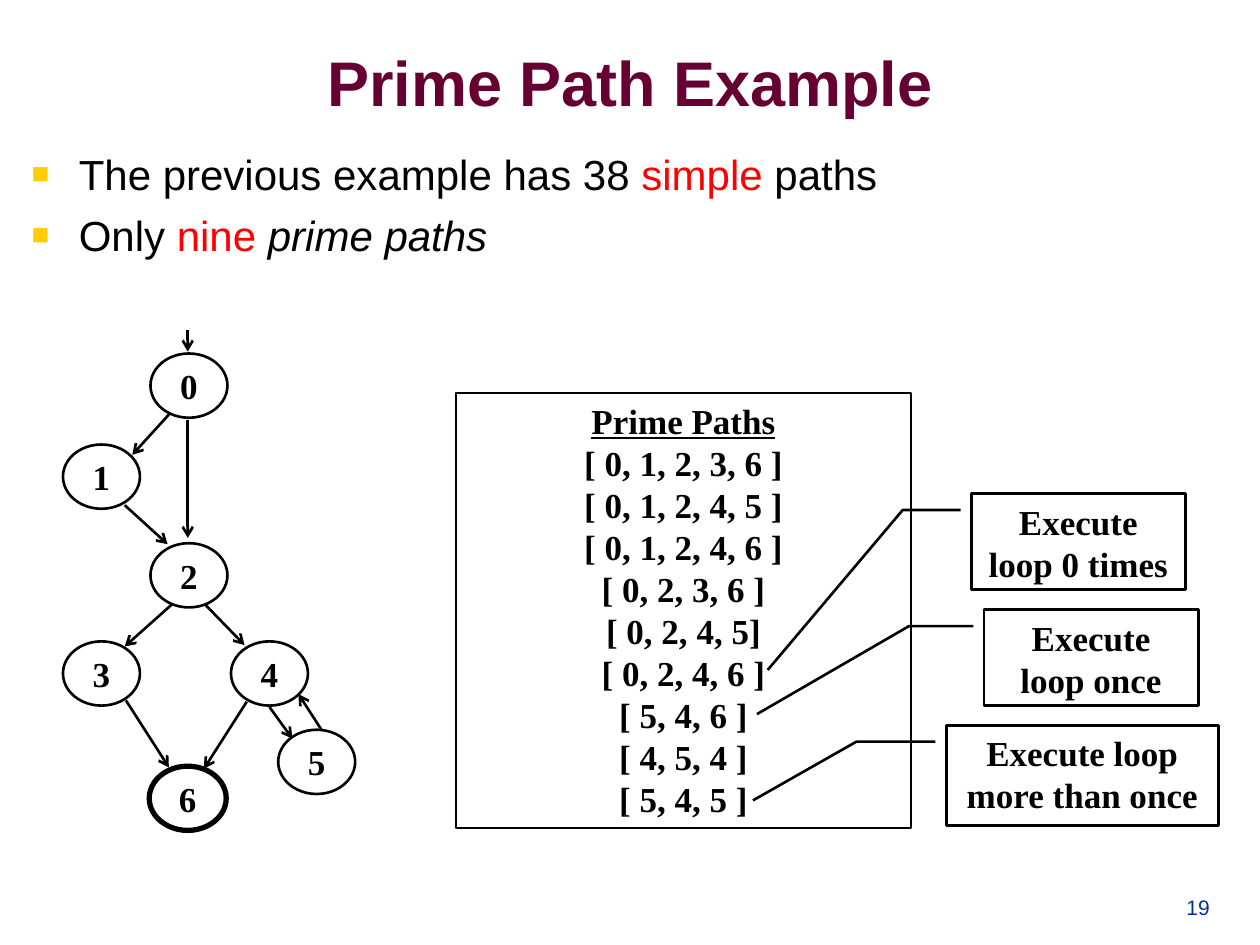
"""Build the slide that lists the prime paths of a control-flow graph."""
from typing import NamedTuple

from lxml.etree import SubElement
from pptx import Presentation
from pptx.dml.color import RGBColor
from pptx.enum.shapes import MSO_CONNECTOR, MSO_SHAPE
from pptx.enum.text import MSO_ANCHOR, MSO_AUTO_SIZE, PP_ALIGN
from pptx.oxml.ns import qn
from pptx.util import Pt

BLACK, RED, MAROON, BLUE, GOLD = "000000", "FF0000", "660033", "003399", "FFCC00"
TITLE = {"name": "Arial", "size": Pt(36), "bold": True}
BODY = {"name": "Arial", "size": Pt(24), "bold": False}
PAGE = {"name": "Arial", "size": Pt(12), "bold": False}
LABEL = {"name": "Times New Roman", "size": Pt(20), "bold": True}
NODE_WIDTH, NODE_HEIGHT = 44, 36.7


class Node(NamedTuple):
    label: str
    left: float
    top: float
    border: float = 1.5


class Edge(NamedTuple):
    x1: float
    y1: float
    x2: float
    y2: float


class Callout(NamedTuple):
    label: str
    left: float
    top: float
    width: float
    height: float
    leader: tuple


class Part(NamedTuple):
    wording: str
    color: str = BLACK
    italic: bool = False


NODES = [
    Node("0", 86, 202), Node("1", 36, 254), Node("2", 86, 310.4),
    Node("3", 36, 366.5), Node("4", 132, 366.5), Node("5", 159, 417),
    Node("6", 85.3, 437.8, 3),
]
EDGES = [
    Edge(107.3, 188.6, 107.3, 200.9), Edge(96.5, 236.9, 75.6, 259.9),
    Edge(107.3, 239.8, 107.3, 307.4), Edge(71.3, 288.7, 95.8, 311),
    Edge(98, 345.6, 71.3, 369.4), Edge(117.4, 345.6, 139.7, 368.6),
    Edge(72, 400.3, 96.5, 438.5), Edge(141, 401, 116.6, 439.2),
    Edge(154, 404, 167, 422), Edge(183.6, 416.9, 170.6, 396.7),
]
CALLOUTS = [
    Callout("Execute loop 0 times", 555, 282.2, 122.4, 54.7,
            (0.17, -0.05, 0.17, -0.32, 1.84, -0.95)),
    Callout("Execute loop once", 562.3, 348.5, 122.4, 54.7,
            (0.17, -0.05, 0.17, -0.35, 1.09, -1.06)),
    Callout("Execute loop more than once", 540.7, 414.7, 155.5, 56.9,
            (0.16, -0.04, 0.16, -0.33, 0.75, -0.71)),
]
PRIME_PATHS = [
    "[ 0, 1, 2, 3, 6 ]", "[ 0, 1, 2, 4, 5 ]", "[ 0, 1, 2, 4, 6 ]",
    "[ 0, 2, 3, 6 ]", "[ 0, 2, 4, 5]", "[ 0, 2, 4, 6 ]",
    "[ 5, 4, 6 ]", "[ 4, 5, 4 ]", "[ 5, 4, 5 ]",
]
BULLETS = [
    [Part("The previous example has 38 "), Part("simple ", RED), Part("paths")],
    [Part("Only "), Part("nine ", RED), Part("prime paths", italic=True)],
]


def rgb(color: str) -> RGBColor:
    return RGBColor.from_string(color)


def put_text(paragraph, wording: str, values: dict, color: str = BLACK):
    run = paragraph.add_run()
    run.text = wording
    for name, value in values.items():
        setattr(run.font, name, value)
    run.font.color.rgb = rgb(color)
    return run


def place(holder, left: float, top: float, width: float, height: float) -> None:
    holder.left, holder.top = Pt(left), Pt(top)
    holder.width, holder.height = Pt(width), Pt(height)


def add_outline(slide, kind, left: float, top: float, width: float,
                height: float, border: float = 1.5):
    outline = slide.shapes.add_shape(kind, Pt(left), Pt(top), Pt(width), Pt(height))
    outline.shadow.inherit = False
    outline.fill.background()
    outline.line.color.rgb = rgb(BLACK)
    outline.line.width = Pt(border)
    outline.text_frame.vertical_anchor = MSO_ANCHOR.TOP
    return outline


def put_lines(frame, lines: list) -> None:
    for index, line in enumerate(lines):
        paragraph = frame.add_paragraph() if index else frame.paragraphs[0]
        paragraph.alignment = PP_ALIGN.CENTER
        paragraph.line_spacing = Pt(24)
        put_text(paragraph, line, LABEL)


def add_node(slide, node: Node) -> None:
    circle = add_outline(slide, MSO_SHAPE.OVAL, node.left, node.top,
                         NODE_WIDTH, NODE_HEIGHT, node.border)
    frame = circle.text_frame
    frame.word_wrap = False
    frame.vertical_anchor = MSO_ANCHOR.MIDDLE
    for side in ("left", "top", "right", "bottom"):
        setattr(frame, f"margin_{side}", 0)
    put_lines(frame, [node.label])


def add_edge(slide, edge: Edge) -> None:
    arrow = slide.shapes.add_connector(MSO_CONNECTOR.STRAIGHT, *map(Pt, edge))
    arrow.line.color.rgb = rgb(BLACK)
    arrow.line.width = Pt(1.5)
    SubElement(arrow.line._get_or_add_ln(), qn("a:tailEnd"), type="arrow")
    SubElement(arrow._element.spPr, qn("a:effectLst"))


def add_callout(slide, callout: Callout) -> None:
    box = add_outline(slide, MSO_SHAPE.LINE_CALLOUT_2, callout.left, callout.top,
                      callout.width, callout.height)
    for index, value in enumerate(callout.leader):
        box.adjustments[index] = value
    put_lines(box.text_frame, [callout.label])


def add_bullet(paragraph) -> None:
    properties = paragraph._p.get_or_add_pPr()
    properties.set("marL", str(Pt(27)))
    properties.set("indent", str(Pt(-27)))
    tint = SubElement(properties, qn("a:buClr"))
    SubElement(tint, qn("a:srgbClr"), val=GOLD)
    SubElement(properties, qn("a:buSzPct"), val="70000")
    SubElement(properties, qn("a:buFont"), typeface="Arial")
    SubElement(properties, qn("a:buChar"), char="■")


def fill_title(title) -> None:
    place(title, 36, 1.4, 648, 90)
    title.text_frame.vertical_anchor = MSO_ANCHOR.MIDDLE
    heading = title.text_frame.paragraphs[0]
    heading.alignment = PP_ALIGN.CENTER
    put_text(heading, "Prime Path Example", TITLE, MAROON)


def fill_body(body) -> None:
    place(body, 10.8, 77.8, 698.4, 407.5)
    frame = body.text_frame
    frame.auto_size = MSO_AUTO_SIZE.NONE
    frame.margin_top = Pt(7)
    for index, parts in enumerate(BULLETS):
        paragraph = frame.add_paragraph() if index else frame.paragraphs[0]
        add_bullet(paragraph)
        paragraph.space_before = Pt(6 if index else 0)
        for part in parts:
            put_text(paragraph, part.wording, BODY | {"italic": part.italic}, part.color)


def add_page_number(slide) -> None:
    corner = slide.shapes.add_textbox(Pt(648.7), Pt(491.8), Pt(49.7), Pt(37.4))
    frame = corner.text_frame
    frame.word_wrap = True
    frame.vertical_anchor = MSO_ANCHOR.BOTTOM
    frame.paragraphs[0].alignment = PP_ALIGN.RIGHT
    put_text(frame.paragraphs[0], "19", PAGE, BLUE)


def main() -> None:
    deck = Presentation()
    deck.slide_width, deck.slide_height = Pt(720), Pt(540)
    slide = deck.slides.add_slide(deck.slide_layouts[1])
    fill_title(slide.shapes.title)
    fill_body(slide.placeholders[1])
    add_page_number(slide)
    path_list = add_outline(slide, MSO_SHAPE.RECTANGLE, 260.6, 224.6, 260, 248.4, 1)
    put_lines(path_list.text_frame, ["Prime Paths", *PRIME_PATHS])
    path_list.text_frame.paragraphs[0].runs[0].font.underline = True
    for node in NODES:
        add_node(slide, node)
    for edge in EDGES:
        add_edge(slide, edge)
    for callout in CALLOUTS:
        add_callout(slide, callout)
    deck.save("out.pptx")


if __name__ == "__main__":
    main()
